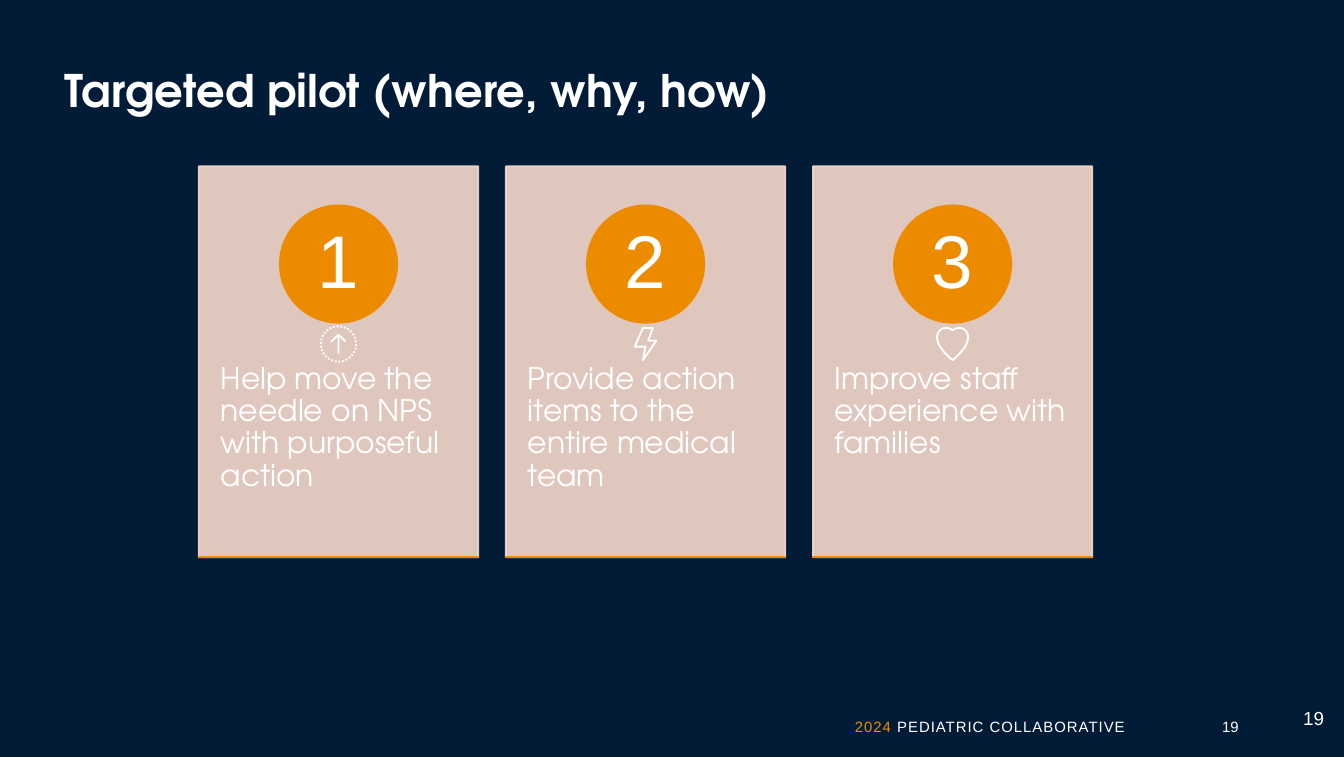
from lxml import etree
from pptx import Presentation
from pptx.dml.color import RGBColor
from pptx.enum.dml import MSO_LINE
from pptx.enum.shapes import MSO_SHAPE
from pptx.enum.text import MSO_ANCHOR, MSO_AUTO_SIZE, PP_ALIGN
from pptx.oxml.ns import qn
from pptx.util import Pt

RECTANGLE, OVAL = MSO_SHAPE.RECTANGLE, MSO_SHAPE.OVAL
LEFT, CENTER, RIGHT = PP_ALIGN.LEFT, PP_ALIGN.CENTER, PP_ALIGN.RIGHT
TOP, MIDDLE = MSO_ANCHOR.TOP, MSO_ANCHOR.MIDDLE
NO_AUTOFIT = MSO_AUTO_SIZE.NONE
DOTS = MSO_LINE.ROUND_DOT

COLORS = {"navy": "021C37", "blush": "F8DACC", "orange": "ED8B00", "white": "FFFFFF"}
HEADING_FONT, PLAIN_FONT = "TeX Gyre Adventor", "Arial"

GOALS = [
    "Help move the needle on NPS with purposeful action",
    "Provide action items to the entire medical team",
    "Improve staff experience with families",
]
CARD_LEFT, CARD_TOP, CARD_WIDTH, CARD_HEIGHT = 106.5, 89.1, 149.7, 209.3
CARD_PITCH = 164.5
RULE_TOP, RULE_HEIGHT = 298.2, 0.1
BADGE_TOP, BADGE_SIZE, NUMBER_SIZE = 110, 62.8, 44.6
GOAL_TOP, GOAL_HEIGHT = 168.7, 125.3
ICON_Y, ICON_SIZE = 184.2, 19

ARROW = [(0, 5.2), (0, -5), (-3.8, -1.3), (0, -5), (3.8, -1.3)]
BOLT = [(-1.4, -8.6), (4, -8.6), (1.4, -1.8), (5.8, -1.8), (-1.4, 8.6), (0, 1.4), (-5.8, 1.4)]
HEART_CURVES = [
    [(0, -7.2), (0.9, -8.2), (2.2, -8.6), (3.6, -8.6)],
    [(3.6, -8.6), (6.3, -8.6), (8.3, -6.4), (8.3, -3.6)],
    [(8.3, -3.6), (8.3, 1.5), (2.5, 6.5), (0, 8.6)],
]


def bezier(controls, steps=12):
    for step in range(steps):
        t = step / steps
        weights = [(1 - t) ** 3, 3 * t * (1 - t) ** 2, 3 * t ** 2 * (1 - t), t ** 3]
        yield tuple(sum(w * c[axis] for w, c in zip(weights, controls)) for axis in (0, 1))


def heart():
    right = [point for curve in HEART_CURVES for point in bezier(curve)]
    return right + [HEART_CURVES[-1][-1]] + [(-x, y) for x, y in reversed(right[1:])]


class Deck:
    def __init__(self, width, height):
        self.presentation = Presentation()
        self.presentation.slide_width, self.presentation.slide_height = Pt(width), Pt(height)
        self.slide = self.presentation.slides.add_slide(self.presentation.slide_layouts[5])
        self.shapes = self.slide.shapes
        background = self.slide.background.fill
        background.solid()
        background.fore_color.rgb = self.color("navy")

    def color(self, name):
        return RGBColor.from_string(COLORS[name])

    def frame(self, holder, insets, anchor=TOP):
        frame = holder.text_frame
        frame.word_wrap = True
        frame.auto_size = NO_AUTOFIT
        frame.vertical_anchor = anchor
        frame.margin_left = frame.margin_right = Pt(insets[0])
        frame.margin_top = frame.margin_bottom = Pt(insets[1])
        return frame

    def style(self, run, size, font, color="white", bold=False):
        run.font.size, run.font.name, run.font.bold = Pt(size), font, bold
        run.font.color.rgb = self.color(color)

    def title(self, text, left, top, width, height):
        title = self.shapes.title
        title.left, title.top, title.width, title.height = map(Pt, (left, top, width, height))
        frame = self.frame(title, (0, 0))
        frame.text = text
        frame.paragraphs[0].alignment = LEFT
        self.style(frame.paragraphs[0].runs[0], 24, HEADING_FONT, bold=True)

    def text(self, parts, box, size, font=PLAIN_FONT, align=LEFT, spacing=1.0,
             insets=(7.2, 3.6), anchor=TOP, tracking=0):
        frame = self.frame(self.shapes.add_textbox(*map(Pt, box)), insets, anchor)
        paragraph = frame.paragraphs[0]
        paragraph.alignment, paragraph.line_spacing = align, spacing
        for words, color in parts:
            run = paragraph.add_run()
            run.text = words
            self.style(run, size, font, color)
            if tracking:
                run.font._element.set("spc", str(tracking))

    def shape(self, kind, box, color, opacity=100):
        shape = self.shapes.add_shape(kind, *map(Pt, box))
        shape.shadow.inherit = False
        shape.fill.solid()
        shape.fill.fore_color.rgb = self.color(color)
        self.outline(shape, color)
        if opacity < 100:
            for tint in shape._element.spPr.iter(qn("a:srgbClr")):
                etree.SubElement(tint, qn("a:alpha")).set("val", str(opacity * 1000))
        return shape

    def outline(self, shape, color):
        shape.line.color.rgb = self.color(color)
        shape.line.width = Pt(1)

    def dotted_ring(self, x, y, size):
        ring = self.shape(OVAL, (x - size / 2, y - size / 2, size, size), "white")
        ring.fill.background()
        ring.line.dash_style = DOTS

    def icon(self, points, x, y, close=True):
        places = [(Pt(x + dx), Pt(y + dy)) for dx, dy in points]
        builder = self.shapes.build_freeform(*places[0])
        builder.add_line_segments(places[1:], close=close)
        icon = builder.convert_to_shape()
        icon.shadow.inherit = False
        icon.fill.background()
        self.outline(icon, "white")

    def card(self, number, goal, left):
        center = left + CARD_WIDTH / 2
        self.shape(RECTANGLE, (left, CARD_TOP, CARD_WIDTH, CARD_HEIGHT), "blush", opacity=90)
        self.text([(goal, "white")], (left, GOAL_TOP, CARD_WIDTH, GOAL_HEIGHT), 16,
                  HEADING_FONT, spacing=0.9, insets=(11.8, 26))
        self.shape(OVAL, (center - BADGE_SIZE / 2, BADGE_TOP, BADGE_SIZE, BADGE_SIZE), "orange")
        number_top = BADGE_TOP + (BADGE_SIZE - NUMBER_SIZE) / 2
        self.text([(str(number), "white")],
                  (center - NUMBER_SIZE / 2, number_top, NUMBER_SIZE, NUMBER_SIZE), 40,
                  align=CENTER, spacing=0.9, insets=(5, 1), anchor=MIDDLE)
        self.shape(RECTANGLE, (left, RULE_TOP, CARD_WIDTH, RULE_HEIGHT), "orange")


def main():
    deck = Deck(720, 405.36)
    deck.title("Targeted pilot (where, why, how)", 34.6, 33.8, 652, 67.7)
    for index, goal in enumerate(GOALS):
        deck.card(index + 1, goal, CARD_LEFT + index * CARD_PITCH)

    arrow_x, bolt_x, heart_x = (
        CARD_LEFT + CARD_WIDTH / 2 + index * CARD_PITCH for index in range(3))
    deck.dotted_ring(arrow_x, ICON_Y, ICON_SIZE)
    deck.icon(ARROW, arrow_x, ICON_Y, close=False)
    deck.icon(BOLT, bolt_x, ICON_Y)
    deck.icon(heart(), heart_x, ICON_Y)

    deck.text([("2024", "orange"), (" PEDIATRIC COLLABORATIVE", "white")],
              (431.3, 379, 178.6, 18), 8, align=RIGHT, spacing=1.2, tracking=50)
    deck.text([("19", "white")], (643.7, 379, 31, 18.7), 8, align=CENTER, spacing=1.2)
    deck.text([("19", "white")], (691, 374.7, 29, 21.6), 10.1)
    deck.presentation.save("out.pptx")


if __name__ == "__main__":
    main()
